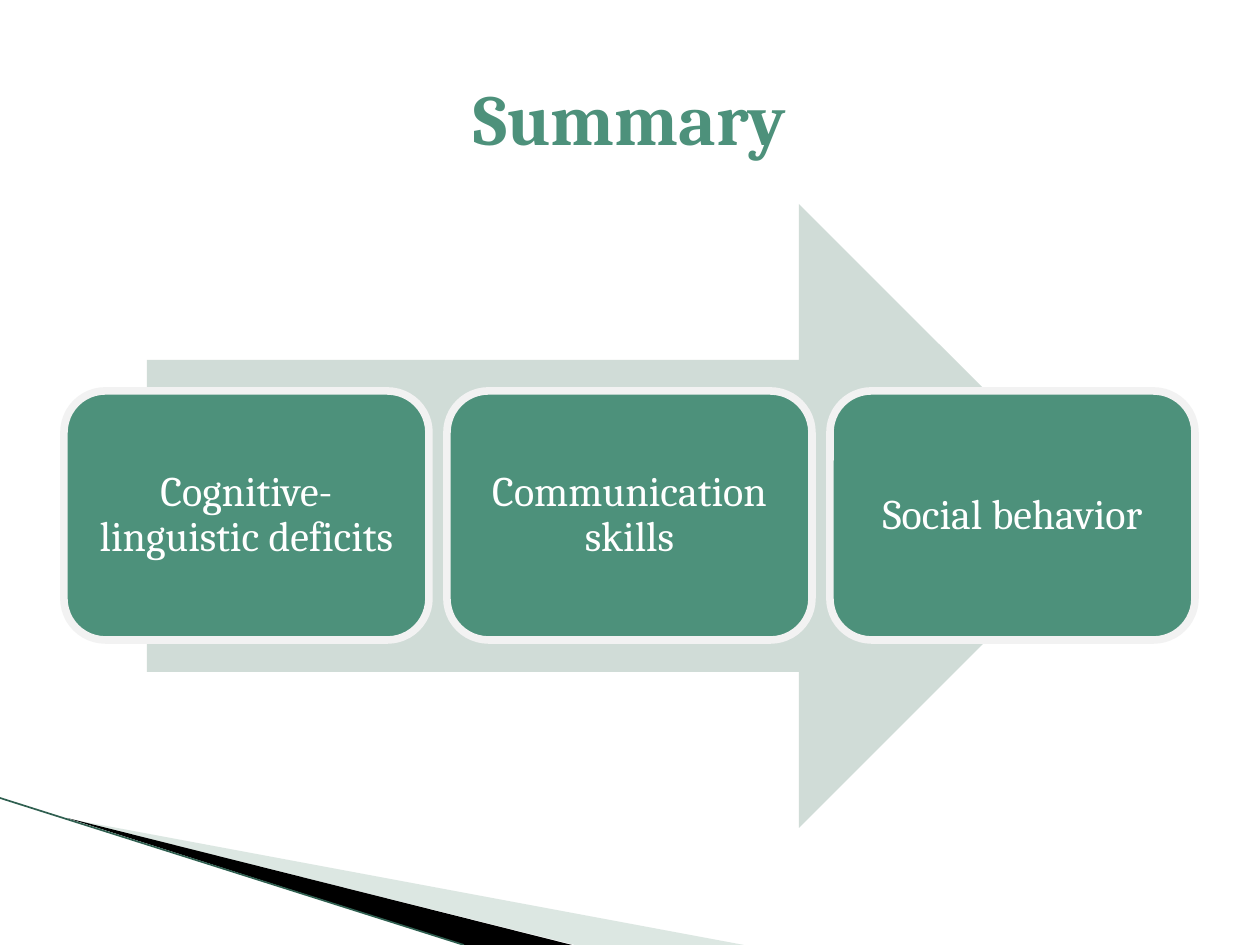
from lxml import etree
from pptx import Presentation
from pptx.dml.color import RGBColor
from pptx.enum.shapes import MSO_CONNECTOR as Connector, MSO_SHAPE as Shape
from pptx.enum.text import MSO_ANCHOR as Anchor, PP_ALIGN as Align
from pptx.oxml.ns import qn
from pptx.util import Pt

PX = 914400 / 126
GREEN, WHITE = "4D917B", "FFFFFF"
TITLE = "Summary"
STEPS = ["Cognitive-linguistic deficits", "Communication skills", "Social behavior"]
WEDGES = [
    ("A8C3B8", 40, [(69, 819), (744, 945), (575, 945)]),
    ("000000", 100, [(67, 818), (572, 945), (464, 945)]),
]
EDGE = ("2F5F50", (0, 798), (464, 945))
ARROW = (147, 204, 964, 624)
CARD_LEFT, CARD_TOP, CARD_WIDTH, CARD_HEIGHT, CARD_STEP = 64, 391, 365, 249, 383


def emu(*lengths):
    return [round(length * PX) for length in lengths]


def rgb(code):
    return RGBColor.from_string(code)


def paint(shape, color):
    shape.shadow.inherit = False
    shape.fill.solid()
    shape.fill.fore_color.rgb = rgb(color)
    shape.line.fill.background()


def write(shape, text, size, color, bold=False):
    frame = shape.text_frame
    frame.word_wrap = True
    frame.vertical_anchor = Anchor.MIDDLE
    frame.margin_left, frame.margin_top, frame.margin_right, frame.margin_bottom = emu(13, 13, 13, 13)
    para = frame.paragraphs[0]
    para.text = text
    para.alignment = Align.CENTER
    font = para.font
    font.name, font.size, font.bold = "Cambria", Pt(size), bold
    font.color.rgb = rgb(color)
    return para


def add_wedge(page, color, opacity, points):
    start, *rest = points
    builder = page.shapes.build_freeform(*start, scale=PX)
    builder.add_line_segments(rest, close=True)
    wedge = builder.convert_to_shape()
    paint(wedge, color)
    if opacity < 100:
        tint = wedge.fill._xPr.find(".//" + qn("a:srgbClr"))
        etree.SubElement(tint, qn("a:alpha"), val=str(opacity * 1000))


def add_edge(page, color, start, end):
    edge = page.shapes.add_connector(Connector.STRAIGHT, *emu(*start, *end))
    edge.line.color.rgb = rgb(color)
    edge.line.width = Pt(0.95)
    etree.SubElement(edge._element.spPr, qn("a:effectLst"))


def add_card(page, index, text):
    left = CARD_LEFT + index * CARD_STEP
    card = page.shapes.add_shape(
        Shape.ROUNDED_RECTANGLE, *emu(left, CARD_TOP, CARD_WIDTH, CARD_HEIGHT))
    paint(card, GREEN)
    card.line.color.rgb = rgb("F2F2F2")
    card.line.width = Pt(4.33)
    write(card, text, 24, WHITE).line_spacing = 0.9


def main():
    deck = Presentation()
    deck.slide_width, deck.slide_height = emu(1260, 945)
    page = deck.slides.add_slide(deck.slide_layouts[6])
    for wedge in WEDGES:
        add_wedge(page, *wedge)
    add_edge(page, *EDGE)
    title = page.shapes.add_textbox(*emu(63, 38, 1134, 157))
    write(title, TITLE, 41, GREEN, bold=True)
    arrow = page.shapes.add_shape(Shape.RIGHT_ARROW, *emu(*ARROW))
    paint(arrow, "D0DCD7")
    for index, text in enumerate(STEPS):
        add_card(page, index, text)
    deck.save("out.pptx")


if __name__ == "__main__":
    main()
